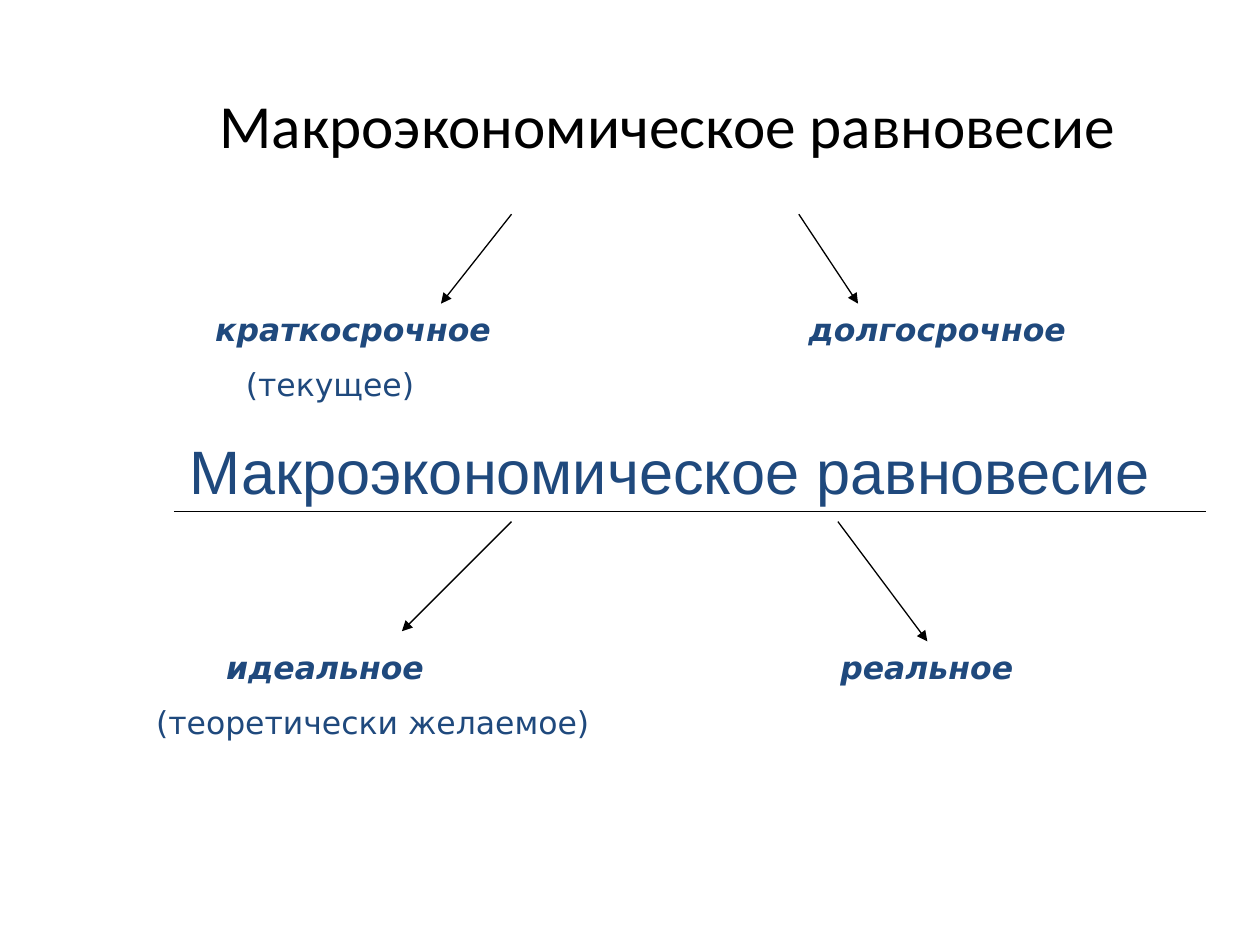
from dataclasses import dataclass

from lxml import etree
from pptx import Presentation
from pptx import util as u
from pptx.dml.color import RGBColor
from pptx.enum import shapes, text
from pptx.oxml import ns

COLORS = {"black": "000000", "navy": "1F497D"}
HEADING = "Макроэкономическое равновесие"


@dataclass
class Heading:
    box: tuple  # left, top, width, height
    font: str
    color: str
    anchor: text.MSO_ANCHOR


@dataclass
class Branches:
    box: tuple
    term: str
    note: str
    other_term: str
    term_tabs: tuple  # starts of the terms within the box
    note_tabs: tuple = ()


@dataclass
class Line:
    start: tuple
    end: tuple
    arrow: bool = True


HEADINGS = [
    Heading((93.6, 25.92, 576, 90), "Calibri", "black", text.MSO_ANCHOR.MIDDLE),
    Heading((99.36, 247.68, 567.36, 45.36), "Arial", "navy", text.MSO_ANCHOR.BOTTOM),
]
BRANCHES = [
    Branches((115.92, 173.52, 555.84, 61.2), "краткосрочное", "(текущее)",
             "долгосрочное", (339,), (17.5,)),
    Branches((82.08, 366.48, 601.2, 61.2), "идеальное", "(теоретически желаемое)",
             "реальное", (40, 391)),
]
LINES = [
    Line((292.32, 122.4), (252, 173.52)),
    Line((456.48, 122.4), (490.32, 173.52)),
    Line((99.36, 292.5), (689.04, 292.5), arrow=False),
    Line((292.32, 298.08), (229.68, 360.72)),
    Line((478.8, 298.08), (529.92, 366.48)),
]


def add_box(slide, box: tuple, anchor=text.MSO_ANCHOR.TOP):
    """Add a wrapping text box and return its text frame."""
    frame = slide.shapes.add_textbox(*map(u.Pt, box)).text_frame
    frame.word_wrap = True
    frame.vertical_anchor = anchor
    return frame


def add_run(paragraph, words: str, font: str, size: float, color: str,
            strong: bool = False) -> None:
    run = paragraph.add_run()
    run.text = words
    run.font.name = font
    run.font.size = u.Pt(size)
    run.font.bold = run.font.italic = strong
    run.font.color.rgb = RGBColor.from_string(COLORS[color])


def set_tabs(paragraph, positions: tuple) -> None:
    if not positions:
        return
    properties = paragraph._p.get_or_add_pPr()
    tabs = etree.SubElement(properties, ns.qn("a:tabLst"))
    for position in positions:
        etree.SubElement(tabs, ns.qn("a:tab"), pos=str(u.Pt(position)), algn="l")


def add_heading(slide, heading: Heading) -> None:
    paragraph = add_box(slide, heading.box, heading.anchor).paragraphs[0]
    paragraph.alignment = text.PP_ALIGN.CENTER
    add_run(paragraph, HEADING, heading.font, 35, heading.color)


def add_branches(slide, branches: Branches) -> None:
    frame = add_box(slide, branches.box)
    # Both terms share a line; one tab leads to each start that has a stop
    terms = frame.paragraphs[0]
    set_tabs(terms, branches.term_tabs)
    lead = "\t" * (len(branches.term_tabs) - 1)
    add_run(terms, f"{lead}{branches.term}\t{branches.other_term}",
            "DejaVu Sans", 18, "navy", strong=True)
    # Note under the left term
    note = frame.add_paragraph()
    note.space_before = u.Pt(10)
    set_tabs(note, branches.note_tabs)
    lead = "\t" * len(branches.note_tabs)
    add_run(note, lead + branches.note, "DejaVu Sans", 18, "navy")


def add_line(slide, line: Line) -> None:
    connector = slide.shapes.add_connector(
        shapes.MSO_CONNECTOR.STRAIGHT, *map(u.Pt, line.start + line.end))
    connector.line.width = u.Pt(0.75)
    connector.line.color.rgb = RGBColor.from_string(COLORS["black"])
    if line.arrow:
        etree.SubElement(connector.line._get_or_add_ln(), ns.qn("a:tailEnd"),
                         type="triangle")
    etree.SubElement(connector._element.spPr, ns.qn("a:effectLst"))


def main() -> None:
    presentation = Presentation()
    presentation.slide_width, presentation.slide_height = u.Pt(720), u.Pt(540)
    slide = presentation.slides.add_slide(presentation.slide_layouts[6])
    for heading in HEADINGS:
        add_heading(slide, heading)
    for branches in BRANCHES:
        add_branches(slide, branches)
    for line in LINES:
        add_line(slide, line)
    presentation.save("out.pptx")


if __name__ == "__main__":
    main()
